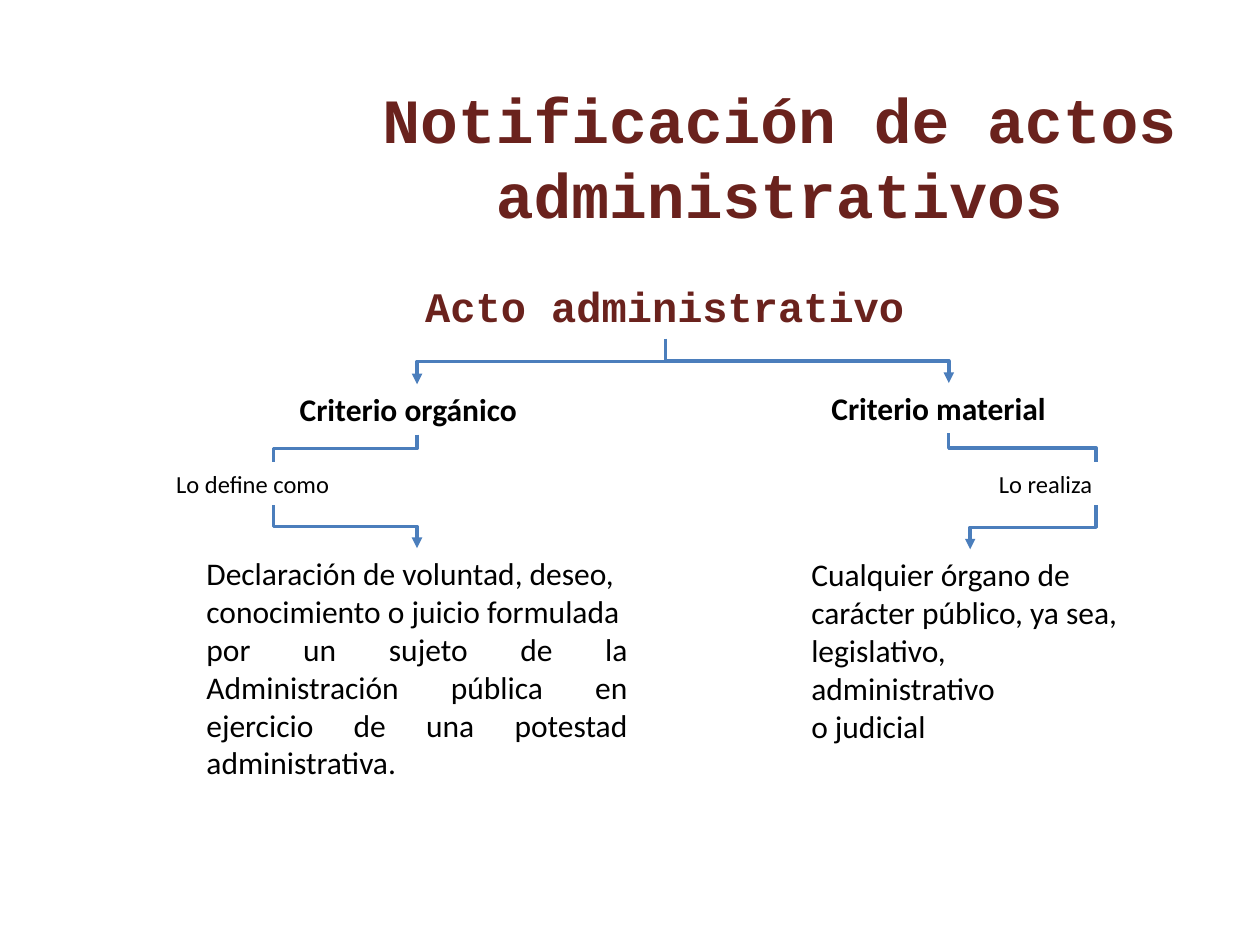
"""Build a slide with a tree of criteria for administrative acts."""
from lxml import etree
from pptx import Presentation
from pptx.dml.color import RGBColor
from pptx.enum.shapes import MSO_CONNECTOR
from pptx.enum.text import MSO_ANCHOR, MSO_AUTO_SIZE, PP_ALIGN
from pptx.oxml.ns import qn
from pptx.util import Inches, Pt

ELBOW = MSO_CONNECTOR.ELBOW
LEFT, CENTER, JUSTIFY = PP_ALIGN.LEFT, PP_ALIGN.CENTER, PP_ALIGN.JUSTIFY
TOP, MIDDLE = MSO_ANCHOR.TOP, MSO_ANCHOR.MIDDLE
FIXED, GROW = MSO_AUTO_SIZE.NONE, MSO_AUTO_SIZE.SHAPE_TO_FIT_TEXT


def color(value):
    return RGBColor.from_string(value)


class TreePage:
    BROWN, BLACK, BLUE = "6A221D", "000000", "4B7EBC"
    HEADING_FONT, TEXT_FONT = "Courier New", "Calibri"
    LINE_WIDTH = 2

    def __init__(self, page):
        self.page = page

    def fill_frame(self, frame, lines, align, hue, font_values):
        frame.word_wrap = True
        for index, line in enumerate(lines):
            para = frame.add_paragraph() if index else frame.paragraphs[0]
            para.alignment = align
            para.space_before = Pt(0)
            span = para.add_run()
            span.text = line
            for name, value in font_values.items():
                setattr(span.font, name, value)
            span.font.color.rgb = color(hue)

    def heading(self, box, area, text, size, anchor):
        for name, value in zip(("left", "top", "width", "height"), area):
            setattr(box, name, Inches(value))
        frame = box.text_frame
        frame.auto_size = FIXED
        frame.vertical_anchor = anchor
        self.fill_frame(frame, [text], CENTER, self.BROWN,
                        {"name": self.HEADING_FONT, "size": Pt(size), "bold": True})
        return frame.paragraphs[0]

    def title(self, area, text):
        self.heading(self.page.shapes.title, area, text, 36, MIDDLE)

    def root(self, area, text):
        para = self.heading(self.page.placeholders[1], area, text, 24, TOP)
        properties = para._p.get_or_add_pPr()
        properties.set("marL", "0")
        properties.set("indent", "0")
        etree.SubElement(properties, qn("a:buNone"))

    def text(self, area, lines, size=18, bold=False, align=LEFT):
        box = self.page.shapes.add_textbox(*map(Inches, area))
        self.fill_frame(box.text_frame, lines, align, self.BLACK,
                        {"name": self.TEXT_FONT, "size": Pt(size), "bold": bold})
        box.text_frame.auto_size = GROW

    def branch(self, start, end, arrow=False):
        (x1, y1), (x2, y2) = start, end
        center_x, center_y = (x1 + x2) / 2, (y1 + y2) / 2
        half_run, half_drop = abs(x2 - x1) / 2, (y2 - y1) / 2
        side, degrees = (1, 270) if x2 > x1 else (-1, 90)
        points = (center_x + side * half_drop, center_y - half_run,
                  center_x - side * half_drop, center_y + half_run)
        line = self.page.shapes.add_connector(ELBOW, *map(Inches, points))
        line.line.color.rgb = color(self.BLUE)
        line.line.width = Pt(self.LINE_WIDTH)
        properties = line.element.spPr
        properties.find(qn("a:xfrm")).set("rot", str(degrees * 60000))
        if arrow:
            etree.SubElement(properties.find(qn("a:ln")), qn("a:tailEnd"), type="triangle")
        etree.SubElement(properties, qn("a:effectLst"))


def main():
    deck = Presentation()
    deck.slide_width, deck.slide_height = Inches(10), Inches(7.5)
    tree = TreePage(deck.slides.add_slide(deck.slide_layouts[1]))

    tree.title((2.64, 0.29, 7.09, 1.89), "Notificación de actos administrativos")
    tree.root((3.03, 2.18, 4.49, 0.51), "Acto administrativo")

    tree.text((1.54, 4.35, 3.54, 1.92), [
        "Declaración de voluntad, deseo,",
        "conocimiento o juicio formulada",
        "por un sujeto de la Administración pública en ejercicio de una potestad administrativa.",
    ], align=JUSTIFY)
    tree.text((6.34, 4.36, 2.72, 1.6), [
        "Cualquier órgano de",
        "carácter público, ya sea,",
        "legislativo, administrativo",
        "o judicial",
    ])

    root_bottom = (5.28, 2.69)
    criteria = [
        ("Criterio orgánico", 2.28, 3.05, "Lo define como", 1.3, (3.31, 4.35)),
        ("Criterio material", 6.5, 3.04, "Lo realiza", 7.83, (7.7, 4.36)),
    ]
    for criterion, left, top, link, link_left, detail_top in criteria:
        middle, link_middle = left + 1.03, link_left + 0.87
        tree.text((left, top, 2.05, 0.4), [criterion], bold=True)
        tree.text((link_left, 3.67, 1.73, 0.34), [link], size=14)
        tree.branch(root_bottom, (middle, top), arrow=True)
        tree.branch((middle, top + 0.4), (link_middle, 3.67))
        tree.branch((link_middle, 4.01), detail_top, arrow=True)

    deck.save("out.pptx")


if __name__ == "__main__":
    main()
